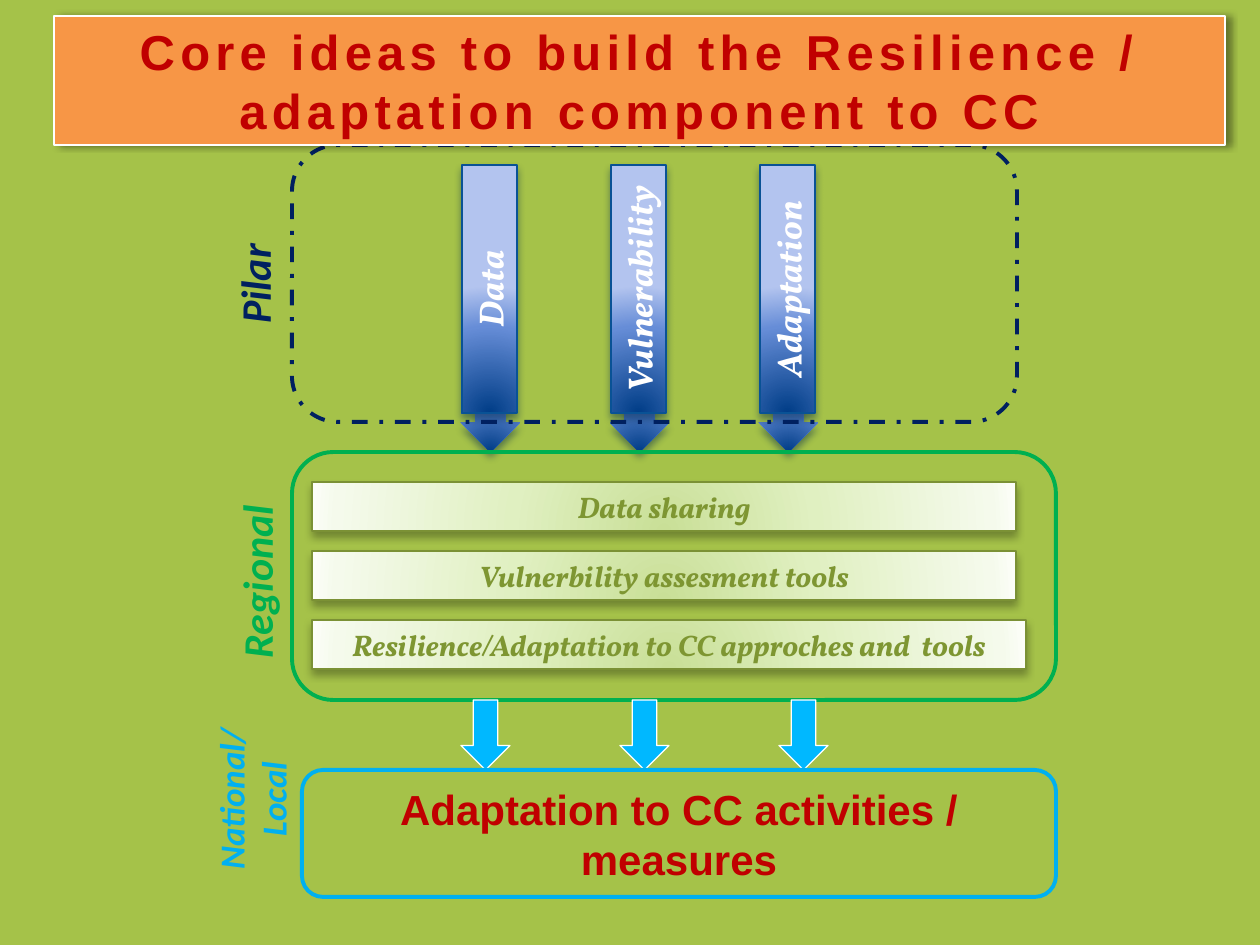
from dataclasses import dataclass

from lxml import etree
from pptx import Presentation
from pptx import util as u
from pptx.dml.color import RGBColor
from pptx.enum import dml, shapes, text
from pptx.oxml import parse_xml
from pptx.oxml.ns import nsdecls, qn

EMU_PER_PX = 914400 / 126


@dataclass(frozen=True)
class Theme:
    background: str = "A5C249"
    banner: str = "F79646"
    strong: str = "C00000"
    white: str = "FFFFFF"
    navy: str = "002060"
    green: str = "00B050"
    cyan: str = "00B0F0"
    arrow: str = "00B8FF"
    pillar_line: str = "095295"
    bar_line: str = "7B9135"
    bar_text: str = "7E9632"
    pillar_stops: tuple = ((0, "003D87"), (68, "668DD7"), (100, "B3C4EF"))
    bar_stops: tuple = ((0, "C9DF97"), (43, "E0F0C1"), (93, "F5FAEC"), (100, "FCFEF8"))
    # Shadows: colour, opacity %, blur pt, distance pt, direction in degrees
    pillar_shadow: tuple = ("042747", 48, 4.5, 3, 90)
    bar_shadow: tuple = ("3A4519", 48, 4.5, 3, 90)
    banner_shadow: tuple = ("000000", 40, 4, 3, 0)
    hair: float = 0.75
    frame: float = 2.25
    title_size: int = 28
    large: int = 24
    medium: int = 20
    small: int = 17
    sans: str = "Arial"
    label: str = "Calibri"
    serif: str = "Vollkorn"


THEME = Theme()
KIND = shapes.MSO_SHAPE


def px(length):
    return u.Emu(round(length * EMU_PER_PX))


def place(shape, box, upright=False):
    """Fit the shape to the box as seen; upright ones are turned to read upwards."""
    x, y, width, height = box
    if upright:
        x, y = x + (width - height) / 2, y + (height - width) / 2
        width, height = height, width
        shape.rotation = 270
    shape.left, shape.top, shape.width, shape.height = map(px, (x, y, width, height))


def paint(shape, fill=None, line=None, weight=THEME.hair, shadow=None):
    """Fill is a colour, a tuple of gradient stops, or None."""
    shape.shadow.inherit = False
    if isinstance(fill, str):
        shape.fill.solid()
        shape.fill.fore_color.rgb = RGBColor.from_string(fill)
    else:
        shape.fill.background()
        if fill:
            add_gradient(shape, fill)
    if line:
        shape.line.color.rgb = RGBColor.from_string(line)
        shape.line.width = u.Pt(weight)
    else:
        shape.line.fill.background()
    if shadow:
        add_shadow(shape, *shadow)


def add_gradient(shape, stops):
    marks = "".join(
        f'<a:gs pos="{at * 1000}"><a:srgbClr val="{color}"/></a:gs>' for at, color in stops
    )
    gradient = parse_xml(
        f'<a:gradFill {nsdecls("a")} rotWithShape="0"><a:gsLst>{marks}</a:gsLst>'
        '<a:path path="circle"><a:fillToRect l="50000" t="130000" r="50000" b="-30000"/>'
        "</a:path></a:gradFill>"
    )
    properties = shape.element.spPr
    properties.replace(properties.find(qn("a:noFill")), gradient)


def add_shadow(shape, color, opacity, blur, distance, direction):
    effects = shape.element.spPr.find(qn("a:effectLst"))
    outer = etree.SubElement(
        effects, qn("a:outerShdw"), blurRad=str(u.Pt(blur)), dist=str(u.Pt(distance)),
        dir=str(direction * 60000), algn="ctr", rotWithShape="0",
    )
    tint = etree.SubElement(outer, qn("a:srgbClr"), val=color)
    etree.SubElement(tint, qn("a:alpha"), val=str(opacity * 1000))


def write(shape, words, font, size, color, italic=True):
    frame = shape.text_frame
    frame.word_wrap = True
    frame.auto_size = text.MSO_AUTO_SIZE.NONE
    frame.vertical_anchor = text.MSO_ANCHOR.MIDDLE
    frame.text = words
    para = frame.paragraphs[0]
    para.alignment = text.PP_ALIGN.CENTER
    span = para.runs[0]
    span.font.name, span.font.size = font, u.Pt(size)
    span.font.bold, span.font.italic = True, italic
    span.font.color.rgb = RGBColor.from_string(color)
    return span


def add_block(page, kind, box, upright=False, **style):
    block = page.shapes.add_shape(kind, 0, 0, 0, 0)
    place(block, box, upright)
    paint(block, **style)
    return block


def add_side_label(page, box, words, size, color):
    label = page.shapes.add_textbox(0, 0, 0, 0)
    place(label, box, upright=True)
    write(label, words, THEME.label, size, color)


def add_pillars(page, box):
    x, y, width, height = box
    pitch, look = 149, dict(fill=THEME.pillar_stops, shadow=THEME.pillar_shadow)
    tip = y + height + 30
    for i, length in enumerate((148, 158, 138)):
        add_block(page, KIND.DOWN_ARROW, (x + 169 + i * pitch, tip - length, 59, length), **look)
    for i, name in enumerate(("Data", "Vulnerability", "Adaptation")):
        pillar = add_block(page, KIND.RECTANGLE, (x + 170 + i * pitch, y + 20, 55, 248),
                           upright=True, line=THEME.pillar_line, **look)
        write(pillar, name, THEME.serif, THEME.medium, THEME.white)
    outline = add_block(page, KIND.ROUNDED_RECTANGLE, box, line=THEME.navy, weight=THEME.frame)
    outline.line.dash_style = dml.MSO_LINE.DASH_DOT
    add_side_label(page, (x - 70, y + 80, 64, 118), "Pilar", THEME.large, THEME.navy)


def add_regional(page, box):
    x, y, width, height = box
    bars = (
        ("Data sharing", 704),
        ("Vulnerbility assesment tools", 704),
        ("Resilience/Adaptation to CC approches and  tools", 714),
    )
    for i, (words, length) in enumerate(bars):
        bar = add_block(page, KIND.RECTANGLE, (x + 20, y + 30 + i * 69, length, 49),
                        fill=THEME.bar_stops, line=THEME.bar_line, shadow=THEME.bar_shadow)
        write(bar, words, THEME.serif, THEME.small, THEME.bar_text)
    add_block(page, KIND.ROUNDED_RECTANGLE, box, line=THEME.green, weight=THEME.frame)
    add_side_label(page, (x - 68, y + 30, 64, 199), "Regional", THEME.large, THEME.green)
    for i in range(3):
        add_block(page, KIND.DOWN_ARROW, (x + 169 + i * 159, y + height, 49, 70),
                  fill=THEME.arrow, line=THEME.white)


def add_national(page, box):
    x, y, width, height = box
    outline = add_block(page, KIND.ROUNDED_RECTANGLE, box, line=THEME.cyan, weight=THEME.frame)
    write(outline, "Adaptation to CC activities / measures", THEME.sans, THEME.large,
          THEME.strong, italic=False)
    add_side_label(page, (x - 99, y - 70, 97, 198), "National/ Local", THEME.medium, THEME.cyan)


def add_title(page, box):
    """Place the title banner in front of everything else."""
    title = page.shapes.title
    place(title, box)
    paint(title, fill=THEME.banner, line=THEME.white, shadow=THEME.banner_shadow)
    span = write(title, "Core ideas to build the Resilience / adaptation component to CC",
                 THEME.sans, THEME.title_size, THEME.strong, italic=False)
    span._r.get_or_add_rPr().set("spc", "300")
    title.element.getparent().append(title.element)


def main():
    deck = Presentation()
    deck.slide_width, deck.slide_height = px(1260), px(945)
    page = deck.slides.add_slide(deck.slide_layouts[5])
    page.background.fill.solid()
    page.background.fill.fore_color.rgb = RGBColor.from_string(THEME.background)
    add_pillars(page, (292, 145, 725, 277))
    add_regional(page, (292, 452, 764, 248))
    add_national(page, (302, 770, 754, 127))
    add_title(page, (54, 16, 1171, 129))
    deck.save("out.pptx")


if __name__ == "__main__":
    main()
